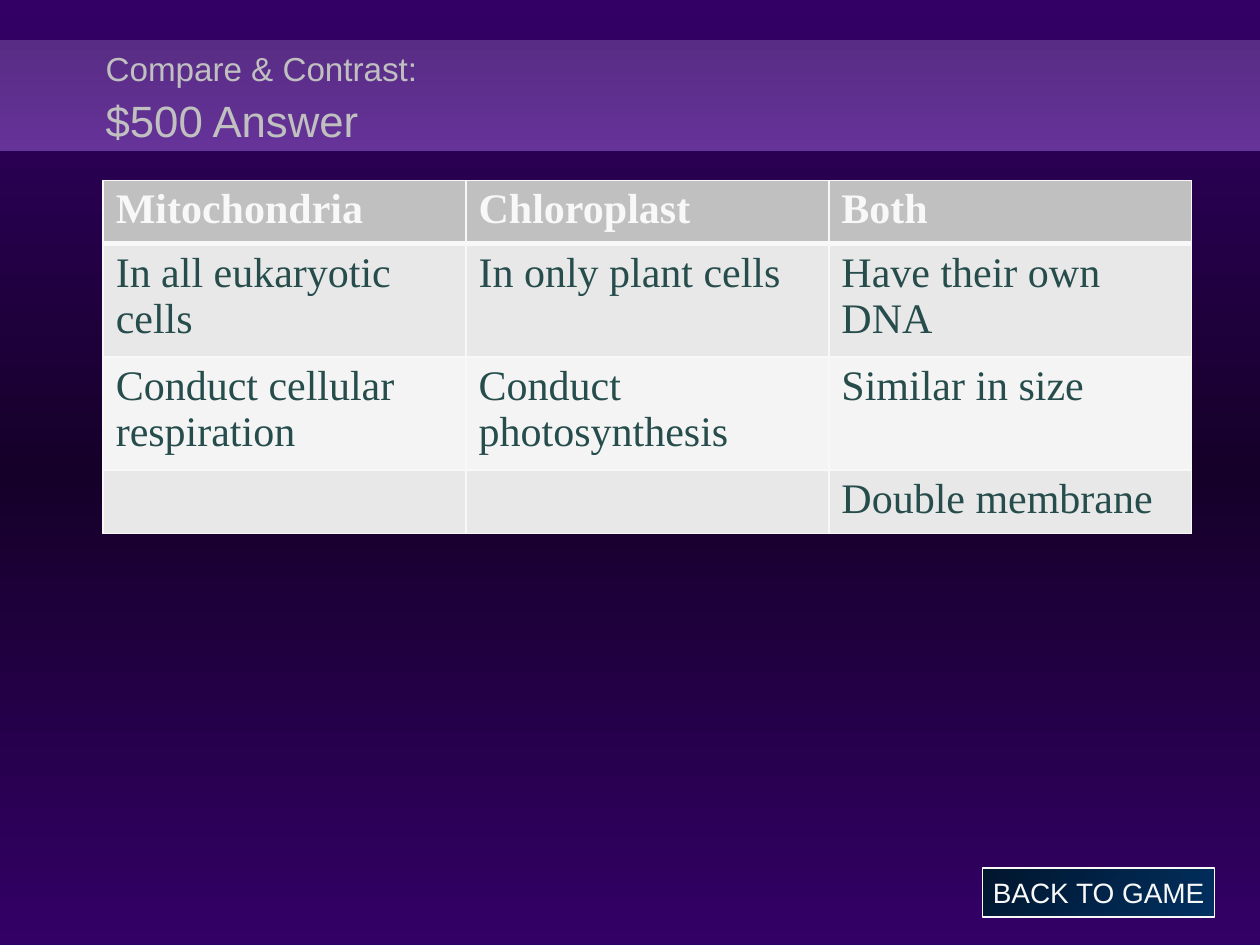
import copy

import pptx
import pptx.dml.color
import pptx.enum.shapes
import pptx.enum.text
import pptx.oxml
import pptx.oxml.ns
import pptx.util

Pt = pptx.util.Pt
WHITE = "F8F8F8"
SILVER = "C0C0C0"
ROWS = [
    ["Mitochondria", "Chloroplast", "Both"],
    ["In all eukaryotic cells", "In only plant cells", "Have their own DNA"],
    ["Conduct cellular respiration", "Conduct photosynthesis", "Similar in size"],
    ["", "", "Double membrane"],
]


def color(value):
    return pptx.dml.color.RGBColor.from_string(value)


def set_gradient(fill, element, angle, values):
    """Spread the colours evenly; the angle runs clockwise."""
    fill.gradient()
    fill.gradient_angle = 360 - angle
    stop_list = next(element.iter(pptx.oxml.ns.qn("a:gsLst")))
    while len(stop_list) < len(values):
        stop_list.append(copy.deepcopy(stop_list[-1]))
    for index, (stop, value) in enumerate(zip(fill.gradient_stops, values)):
        stop.position = index / (len(values) - 1)
        stop.color.rgb = color(value)


def add_run(paragraph, text, font, size, value, bold=False):
    run = paragraph.add_run()
    run.text = text
    run.font.name = font
    run.font.size = Pt(size)
    run.font.bold = bold
    run.font.color.rgb = color(value)


def add_gradient_box(slide, left, top, width, height, angle, values):
    shape = slide.shapes.add_shape(
        pptx.enum.shapes.MSO_SHAPE.RECTANGLE, Pt(left), Pt(top), Pt(width), Pt(height))
    shape.shadow.inherit = False
    set_gradient(shape.fill, shape.element, angle, values)
    shape.line.fill.background()
    return shape


def add_title_band(slide, left, top, width, height):
    add_gradient_box(slide, left, top, width, height, 90, ["582C84", "663399"])
    title = slide.shapes.add_textbox(
        Pt(left + 53.3), Pt(top - 0.5), Pt(width - 66.3), Pt(height + 0.5))
    frame = title.text_frame
    frame.word_wrap = True
    frame.vertical_anchor = pptx.enum.text.MSO_ANCHOR.MIDDLE
    paragraph = frame.paragraphs[0]
    paragraph.line_spacing = 1.1
    add_run(paragraph, "Compare & Contrast: ", "Arial", 19, SILVER)
    paragraph.add_line_break()
    add_run(paragraph, "$500 Answer", "Arial", 25, SILVER)


def set_borders(cell, top, bottom):
    properties = cell._tc.get_or_add_tcPr()
    widths = {"lnL": 1, "lnR": 1, "lnT": top, "lnB": bottom}
    for index, (tag, width) in enumerate(widths.items()):
        properties.insert(index, pptx.oxml.parse_xml(
            f'<a:{tag} {pptx.oxml.ns.nsdecls("a")} w="{Pt(width)}"><a:solidFill>'
            f'<a:srgbClr val="{WHITE}"/></a:solidFill></a:{tag}>'))


def add_comparison_table(slide, left, top, width, height):
    table = slide.shapes.add_table(
        len(ROWS), len(ROWS[0]), Pt(left), Pt(top), Pt(width), Pt(height)).table
    for row_index, texts in enumerate(ROWS):
        header = row_index == 0
        fill = SILVER if header else ("F4F4F4", "E8E8E8")[row_index % 2]
        for column_index, text in enumerate(texts):
            cell = table.cell(row_index, column_index)
            cell.fill.solid()
            cell.fill.fore_color.rgb = color(fill)
            set_borders(cell, 3 if row_index == 1 else 1, 3 if header else 1)
            if text:
                add_run(cell.text_frame.paragraphs[0], text, "Times New Roman", 24,
                        WHITE if header else "264D4C", header)


def add_back_button(slide, left, top, width, height):
    button = add_gradient_box(slide, left, top, width, height, 45, ["00162D", "013061"])
    button.line.color.rgb = color(WHITE)
    button.line.width = Pt(0.75)
    frame = button.text_frame
    frame.word_wrap = False
    frame.vertical_anchor = pptx.enum.text.MSO_ANCHOR.MIDDLE
    paragraph = frame.paragraphs[0]
    paragraph.alignment = pptx.enum.text.PP_ALIGN.CENTER
    add_run(paragraph, "BACK TO GAME", "Arial", 16, WHITE)


def main():
    presentation = pptx.Presentation()
    presentation.slide_width = Pt(720)
    presentation.slide_height = Pt(540)
    slide = presentation.slides.add_slide(presentation.slide_layouts[6])
    set_gradient(slide.background.fill, slide.element, 90, ["330066", "150029", "330066"])
    add_title_band(slide, 0, 23, 720, 63.4)
    add_back_button(slide, 561.6, 496, 132.5, 28)
    add_comparison_table(slide, 59, 103, 622, 118)
    presentation.save("out.pptx")


if __name__ == "__main__":
    main()
